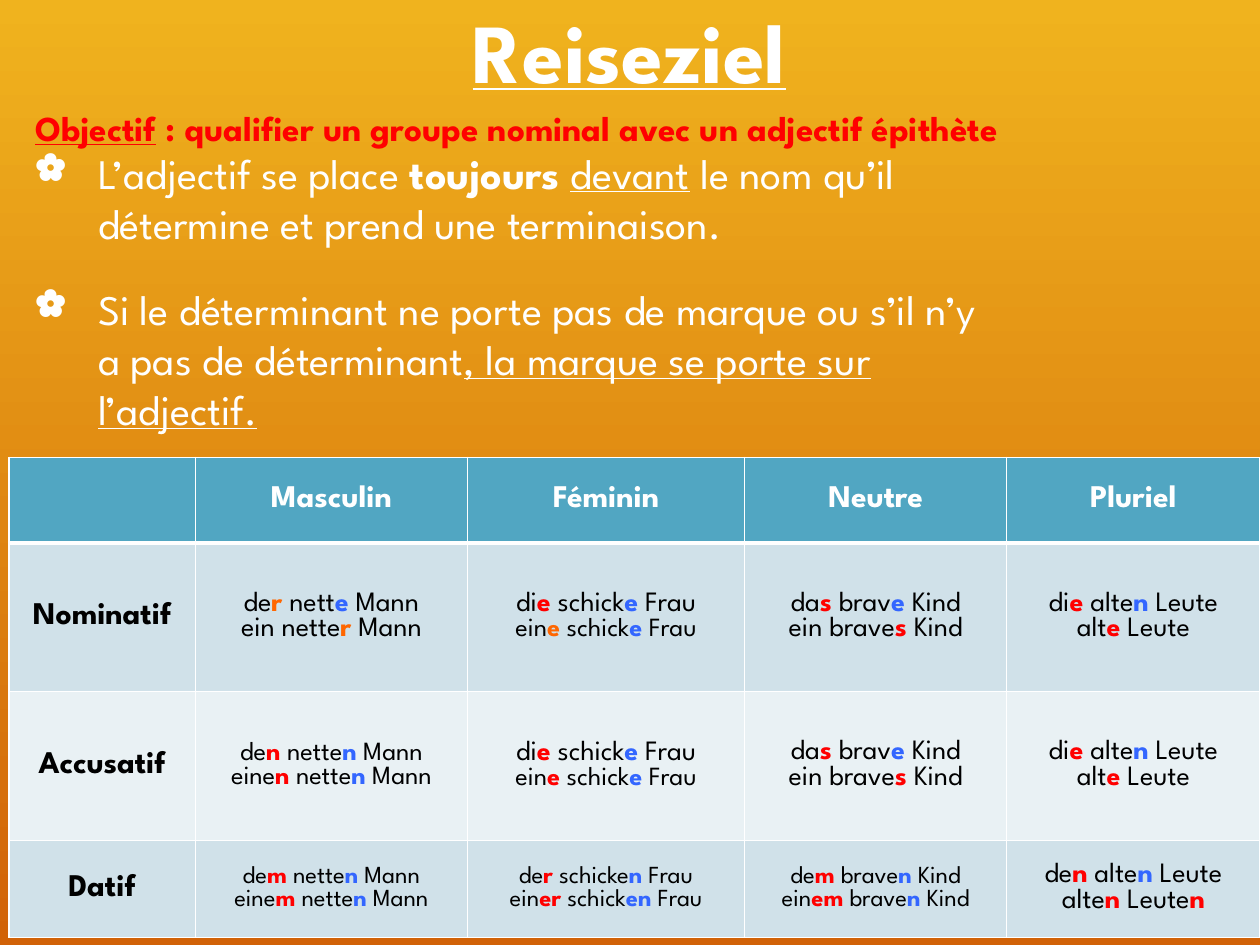
import pptx
import pptx.util
import pptx.dml.color
import pptx.enum.text
import pptx.oxml
import pptx.oxml.ns
from lxml import etree

Inches, Pt = pptx.util.Inches, pptx.util.Pt
RGB = pptx.dml.color.RGBColor.from_string
ALIGN, ANCHOR = pptx.enum.text.PP_ALIGN, pptx.enum.text.MSO_ANCHOR
qn = pptx.oxml.ns.qn

THEME = {
    "font": "League Spartan",
    "white": "FFFFFF", "black": "000000",
    "red": "FF0000", "blue": "3366FF", "orange": "FF6600",
    "bg_top": "F0B31E", "bg_bottom": "D16207",
    "header": "51A6C2", "bands": ("D0E1E9", "E9F1F4"),
    "title": 48, "body": 24, "goal": 20, "label": 18,
}
# Marked spans: *Xtext* where X is one of these codes
ACCENTS = {"R": "red", "B": "blue", "O": "orange"}


def write(p, text, size, color="white", bold=False, underline=False, align=None, spacing=None):
    """Write text in p; *R, *B, *O colour a span, *b makes it bold, *u underlines it."""
    p.alignment = align
    p.line_spacing = spacing
    for i, part in enumerate(text.split("*")):
        code, part = (part[0], part[1:]) if i % 2 else ("", part)
        if not part:
            continue
        r = p.add_run()
        r.text = part
        r.font.name = THEME["font"]
        r.font.size = Pt(size)
        r.font.bold = bold or code == "b" or code in ACCENTS
        r.font.underline = underline or code == "u"
        r.font.color.rgb = RGB(THEME[ACCENTS.get(code, color)])


prs = pptx.Presentation()
prs.slide_width, prs.slide_height = Inches(10), Inches(7.5)
s = prs.slides.add_slide(prs.slide_layouts[5])

# Background
fill = s.background.fill
fill.gradient()
fill.gradient_angle = 270
for stop, pos, name in zip(fill.gradient_stops, (0, 1), ("bg_top", "bg_bottom")):
    stop.position = pos
    stop.color.rgb = RGB(THEME[name])

# Title
sp = s.shapes.title
sp.left, sp.top, sp.width, sp.height = Inches(0.85), Inches(0.1), Inches(8.29), Inches(0.67)
tf = sp.text_frame
tf.vertical_anchor = ANCHOR.MIDDLE
write(tf.paragraphs[0], "Reiseziel", THEME["title"], bold=True, underline=True,
      align=ALIGN.CENTER, spacing=0.95)

# Rules
tf = s.shapes.add_textbox(Inches(0.18), Inches(1.12), Inches(7.91), Inches(2.58)).text_frame
tf.word_wrap = True
rules = [
    "L’adjectif se place *btoujours* *udevant* le nom qu’il détermine et prend une terminaison.",
    "Si le déterminant ne porte pas de marque ou s’il n’y a pas de déterminant"
    "*u, la marque se porte sur l’adjectif.*",
]
for i, rule in enumerate(rules):
    p = tf.add_paragraph() if i else tf.paragraphs[0]
    pPr = p._p.get_or_add_pPr()
    pPr.set("marL", str(Inches(0.5)))
    pPr.set("indent", str(Inches(-0.5)))
    etree.SubElement(pPr, qn("a:buSzPct")).set("val", "90000")
    etree.SubElement(pPr, qn("a:buChar")).set("char", "✿")
    write(p, rule, THEME["body"])
    if i:
        p.space_before = Pt(20)

# Goal
tf = s.shapes.add_textbox(Inches(0.18), Inches(0.8), Inches(8.78), Inches(0.44)).text_frame
tf.word_wrap = True
write(tf.paragraphs[0], "*uObjectif* : qualifier un groupe nominal avec un adjectif épithète",
      THEME["goal"], color="red", bold=True)

# Declension table: each cell is a list of (size, text) lines
neuter = [(16, "da*Rs* brav*Be* Kind"), (16, "ein brave*Rs* Kind")]
plural = [(16, "di*Re* alte*Bn* Leute"), (16, "alt*Re* Leute")]
headers = ["", "Masculin", "Féminin", "Neutre", "Pluriel"]
cases = [
    ("Nominatif",
     [(16, "de*Or* nett*Be* Mann"), (16, "ein nette*Or* Mann")],
     [(16, "di*Re* schick*Be* Frau"), (15, "ein*Oe* schick*Be* Frau")],
     neuter, plural),
    ("Accusatif",
     [(15, "de*Rn* nette*Bn* Mann"), (15, "eine*Rn* nette*Bn* Mann")],
     [(16, "di*Re* schick*Be* Frau"), (15, "ein*Re* schick*Be* Frau")],
     neuter, plural),
    ("Datif",
     [(14, "de*Rm* nette*Bn* Mann"), (14, "eine*Rm* nette*Bn* Mann")],
     [(14, "de*Rr* schicke*Bn* Frau"), (14, "ein*Rer* schick*Ben* Frau")],
     [(14, "de*Rm* brave*Bn* Kind"), (14, "ein*Rem* brave*Bn* Kind")],
     [(16, "de*Rn* alte*Bn* Leute"), (16, "alte*Rn* Leute*Rn*")]),
]
rows = [[[(THEME["label"], h)] for h in headers]]
rows += [[[(THEME["label"], name)], *cells] for name, *cells in cases]

table = s.shapes.add_table(4, 5, Inches(0.07), Inches(3.63), Inches(9.93), Inches(3.81)).table
for col, width in zip(table.columns, (1.48, 2.16, 2.2, 2.08, 2.01)):
    col.width = Inches(width)
for row, height in zip(table.rows, (0.68, 1.18, 1.18, 0.77)):
    row.height = Inches(height)

for i, row in enumerate(rows):
    for j, lines in enumerate(row):
        cell = table.cell(i, j)
        cell.vertical_anchor = ANCHOR.MIDDLE
        for k, (size, text) in enumerate(lines):
            p = cell.text_frame.add_paragraph() if k else cell.text_frame.paragraphs[0]
            write(p, text, size, color="black" if i else "white", bold=i == 0 or j == 0,
                  align=ALIGN.CENTER)
        # Borders come before the fill; the rule under the header is thicker
        tcPr = cell._tc.get_or_add_tcPr()
        for side in "LRTB":
            thick = (i, side) in ((0, "B"), (1, "T"))
            ln = etree.SubElement(tcPr, qn("a:ln" + side), w=str(Pt(3 if thick else 1)))
            solid = etree.SubElement(ln, qn("a:solidFill"))
            etree.SubElement(solid, qn("a:srgbClr"), val=THEME["white"])
        cell.fill.solid()
        cell.fill.fore_color.rgb = RGB(THEME["bands"][(i - 1) % 2] if i else THEME["header"])

prs.save("out.pptx")
